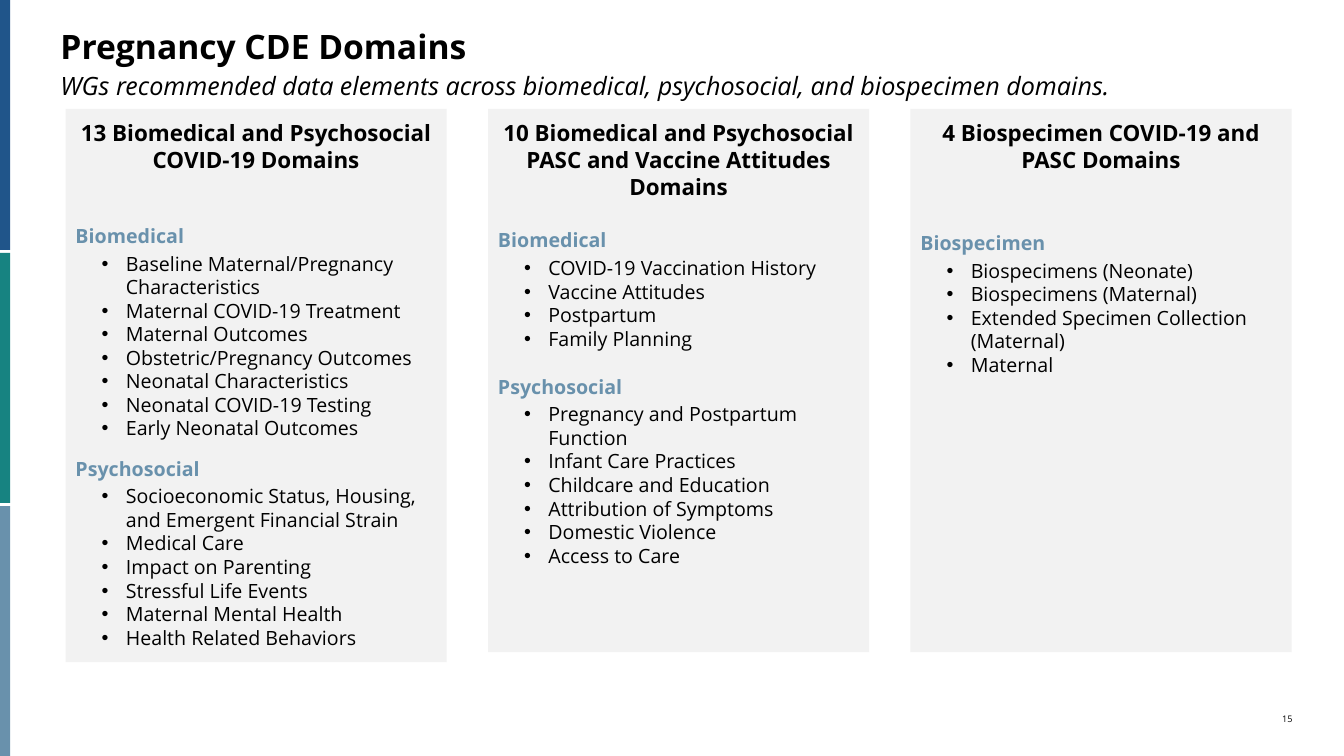
import pptx
import pptx.util
import pptx.dml.color
import pptx.enum.shapes
import pptx.enum.text
from lxml import etree

Inches, Pt = pptx.util.Inches, pptx.util.Pt
RGBColor = pptx.dml.color.RGBColor
ALIGN = pptx.enum.text.PP_ALIGN
RECT = pptx.enum.shapes.MSO_SHAPE.RECTANGLE
TOP = pptx.enum.text.MSO_ANCHOR.TOP

# Content
TITLE = "Pregnancy CDE Domains"
LEAD = ("WGs recommended data elements across biomedical, psychosocial, "
        "and biospecimen domains.")
NUMBER = "15"
# Each panel: height, heading, then groups of (gap above, name, items)
PANELS = [
    (5.49, "13 Biomedical and Psychosocial COVID-19 Domains", [
        (36.5, "Biomedical", [
            "Baseline Maternal/Pregnancy Characteristics",
            "Maternal COVID-19 Treatment",
            "Maternal Outcomes",
            "Obstetric/Pregnancy Outcomes",
            "Neonatal Characteristics",
            "Neonatal COVID-19 Testing",
            "Early Neonatal Outcomes"]),
        (12, "Psychosocial", [
            "Socioeconomic Status, Housing, and Emergent Financial Strain",
            "Medical Care",
            "Impact on Parenting",
            "Stressful Life Events",
            "Maternal Mental Health",
            "Health Related Behaviors"])]),
    (5.39, "10 Biomedical and Psychosocial PASC and Vaccine Attitudes Domains", [
        (20.5, "Biomedical", [
            "COVID-19 Vaccination History",
            "Vaccine Attitudes",
            "Postpartum",
            "Family Planning"]),
        (17.5, "Psychosocial", [
            "Pregnancy and Postpartum Function",
            "Infant Care Practices",
            "Childcare and Education",
            "Attribution of Symptoms",
            "Domestic Violence",
            "Access to Care"])]),
    (5.39, "4 Biospecimen COVID-19 and PASC Domains", [
        (41.5, "Biospecimen", [
            "Biospecimens (Neonate)",
            "Biospecimens (Maternal)",
            "Extended Specimen Collection (Maternal)",
            "Maternal"])]),
]

# Colours and formats
BLACK = RGBColor(0x00, 0x00, 0x00)
GREY = RGBColor(0xF2, 0xF2, 0xF2)
NAVY = RGBColor(0x20, 0x55, 0x8A)
TEAL = RGBColor(0x17, 0x83, 0x81)
STEEL = RGBColor(0x69, 0x91, 0xAC)
FONT = "Open Sans"

HEAD = {"size": Pt(16), "bold": True}
GROUP = {"size": Pt(14), "bold": True}
ITEM = {"size": Pt(14), "bold": False}

# Layout
BAR_W, BAR_H, BAR_STEP = 0.1, 2.48, 2.51
LEFT, TOP_Y, WIDTH, STEP = 0.65, 1.08, 3.78, 4.19
INSET = 0.1

prs = pptx.Presentation()
prs.slide_width, prs.slide_height = Inches(13.33), Inches(7.5)
slide = prs.slides.add_slide(prs.slide_layouts[6])


def add_rect(x, y, w, h, fill):
    rect = slide.shapes.add_shape(RECT, Inches(x), Inches(y), Inches(w), Inches(h))
    rect.shadow.inherit = False
    rect.fill.solid()
    rect.fill.fore_color.rgb = fill
    rect.line.fill.background()
    return rect


def set_frame(frame, inset):
    margins = ("margin_left", "margin_top", "margin_right", "margin_bottom")
    for side in margins:
        setattr(frame, side, Inches(inset))
    frame.word_wrap = True
    frame.vertical_anchor = TOP


def add_para(frame, text, style, color=BLACK, align=ALIGN.LEFT,
             before=0, after=0, bullet=False):
    para = frame.paragraphs[0]
    if para.runs:
        para = frame.add_paragraph()
    if bullet:
        para.level = 1
    for key, value in {"alignment": align, "space_before": Pt(before),
                       "space_after": Pt(after)}.items():
        setattr(para, key, value)
    if bullet:
        props = para._p.get_or_add_pPr()
        props.set("marL", str(Inches(0.5)))
        props.set("indent", str(Inches(-0.24)))
        for tag, key, value in (("buFont", "typeface", "Arial"),
                                ("buChar", "char", "•")):
            mark = etree.SubElement(props, pptx.oxml.ns.qn("a:" + tag))
            mark.set(key, value)
    run = para.add_run()
    run.text = text
    for key, value in {"name": FONT, **style}.items():
        setattr(run.font, key, value)
    run.font.color.rgb = color


def add_text(x, y, w, h, text, style, align=ALIGN.LEFT):
    box = slide.shapes.add_textbox(Inches(x), Inches(y), Inches(w), Inches(h))
    set_frame(box.text_frame, 0)
    add_para(box.text_frame, text, style, align=align)


# Side bars
for i, color in enumerate((NAVY, TEAL, STEEL)):
    add_rect(0, i * BAR_STEP, BAR_W, BAR_H, color)

# Title, lead line and page number
add_text(0.6, 0.26, 12.46, 0.4, TITLE, {"size": Pt(24), "bold": True})
add_text(0.6, 0.7, 12.46, 0.35, LEAD, {"size": Pt(18), "italic": True})
add_text(12.48, 7.08, 0.34, 0.11, NUMBER, {"size": Pt(6.5)}, ALIGN.RIGHT)

# Domain panels
for i, (height, head, groups) in enumerate(PANELS):
    panel = add_rect(LEFT + i * STEP, TOP_Y, WIDTH, height, GREY)
    frame = panel.text_frame
    set_frame(frame, INSET)
    add_para(frame, head, HEAD, align=ALIGN.CENTER)
    for gap, name, items in groups:
        add_para(frame, name, GROUP, STEEL, before=gap, after=3)
        for item in items:
            add_para(frame, item, ITEM, bullet=True)

prs.save("out.pptx")
